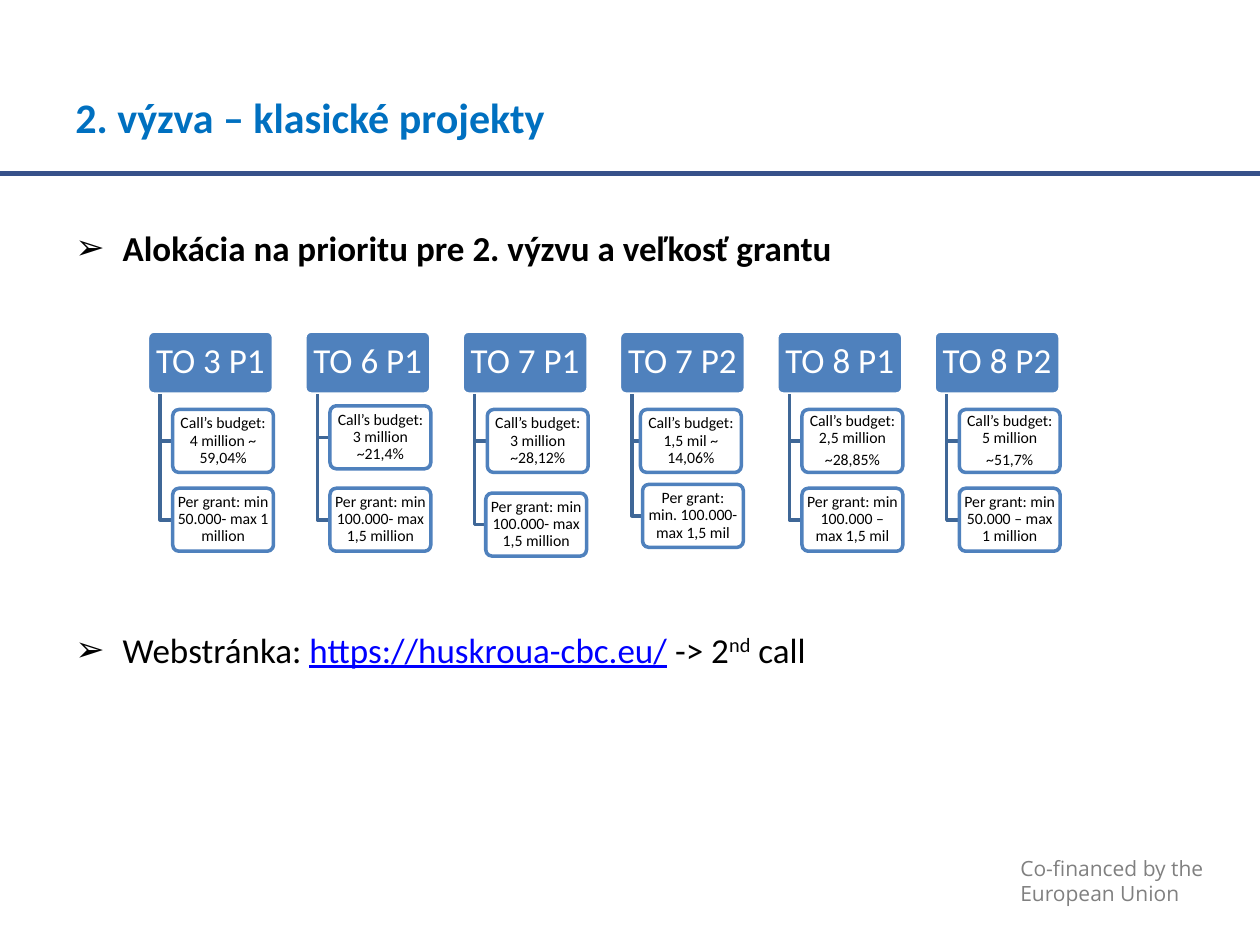
"""Build the slide on second-call allocations per priority and grant sizes."""
from dataclasses import dataclass
from typing import NamedTuple

from lxml.etree import SubElement
from pptx import Presentation
from pptx.dml.color import RGBColor
from pptx.enum.shapes import MSO_CONNECTOR, MSO_SHAPE
from pptx.enum.text import MSO_ANCHOR, PP_ALIGN
from pptx.oxml.ns import qn
from pptx.util import Pt


@dataclass(frozen=True)
class Theme:
    font: str = "Calibri"
    footer_font: str = "Open Sans"
    title: str = "0070C0"
    rule: str = "37518A"
    text: str = "000000"
    link: str = "0000FF"
    footer: str = "808080"
    white: str = "FFFFFF"
    accent: str = "4F81BD"
    branch: str = "3F6797"
    title_size: float = 24
    body_size: float = 20
    footer_size: float = 12
    detail_size: float = 9


class Box(NamedTuple):
    left: float
    top: float
    width: float
    height: float


class Detail(NamedTuple):
    lines: tuple[str, ...]
    dx: float = 0
    dy: float = 0


class Priority(NamedTuple):
    name: str
    budget: Detail
    grant: Detail


class Run(NamedTuple):
    text: str
    link: bool = False
    raised: bool = False


THEME = Theme()
FIRST_LEFT, COLUMN_PITCH = 84.3, 89.9
HEAD_TOP, HEAD_WIDTH, BOX_HEIGHT = 189.2, 72, 36
DETAIL_INDENT, DETAIL_WIDTH = 14.4, 57.6
BUDGET_TOP, GRANT_TOP = 234, 279
BRANCH_INDENT = 7.2

PRIORITIES = (
    Priority("TO 3 P1", Detail(("Call’s budget: 4 million ~ 59,04%",)),
             Detail(("Per grant: min 50.000- max 1 million",))),
    Priority("TO 6 P1", Detail(("Call’s budget: 3 million ~21,4%",), dy=-2.1),
             Detail(("Per grant: min 100.000- max 1,5 million",))),
    Priority("TO 7 P1", Detail(("Call’s budget: 3 million ~28,12%",)),
             Detail(("Per grant: min 100.000- max 1,5 million",), dx=-0.9, dy=2.8)),
    Priority("TO 7 P2", Detail(("Call’s budget: 1,5 mil ~ 14,06%",), dx=-2.4),
             Detail(("Per grant: min. 100.000-max 1,5 mil",), dx=-1.2, dy=-2.2)),
    Priority("TO 8 P1", Detail(("Call’s budget: 2,5 million", "~28,85%")),
             Detail(("Per grant: min 100.000 – max 1,5 mil",))),
    Priority("TO 8 P2", Detail(("Call’s budget: 5 million", "~51,7%")),
             Detail(("Per grant: min 50.000 – max 1 million",))),
)


def rgb(value: str) -> RGBColor:
    return RGBColor.from_string(value)


def style(font, name: str, size: float, color: str, bold: bool = False) -> None:
    font.name, font.size, font.bold = name, Pt(size), bold
    font.color.rgb = rgb(color)


def add_text(slide, box: Box, lines: tuple[str, ...], font: str, size: float,
             color: str, bold: bool = False, anchor=MSO_ANCHOR.TOP) -> None:
    frame = slide.shapes.add_textbox(*map(Pt, box)).text_frame
    frame.word_wrap, frame.vertical_anchor = True, anchor
    frame.text = "\n".join(lines)
    for paragraph in frame.paragraphs:
        style(paragraph.font, font, size, color, bold)


def add_bullet(slide, box: Box, runs: tuple[Run, ...], bold: bool = False) -> None:
    frame = slide.shapes.add_textbox(*map(Pt, box)).text_frame
    frame.word_wrap = True
    paragraph = frame.paragraphs[0]
    properties = paragraph._p.get_or_add_pPr()
    properties.set("marL", str(Pt(27)))
    properties.set("indent", str(Pt(-27)))
    SubElement(properties, qn("a:buFont")).set("typeface", THEME.font)
    SubElement(properties, qn("a:buChar")).set("char", "➢")
    style(paragraph.font, THEME.font, THEME.body_size, THEME.text, bold)
    for part in runs:
        run = paragraph.add_run()
        run.text = part.text
        if part.link:
            run.font.underline = True
            run.font.color.rgb = rgb(THEME.link)
        if part.raised:
            run._r.get_or_add_rPr().set("baseline", "30000")


def add_card(slide, box: Box, lines: tuple[str, ...], size: float, fill: str,
             outline: str, color: str, inset: float, opacity: int = 100) -> None:
    card = slide.shapes.add_shape(MSO_SHAPE.ROUNDED_RECTANGLE, *map(Pt, box))
    card.adjustments[0] = 0.1
    card.shadow.inherit = False
    card.fill.solid()
    card.fill.fore_color.rgb = rgb(fill)
    if opacity < 100:
        solid = card._element.spPr.find(qn("a:solidFill"))
        SubElement(solid[0], qn("a:alpha")).set("val", str(opacity * 1000))
    card.line.color.rgb = rgb(outline)
    card.line.width = Pt(2)
    frame = card.text_frame
    frame.word_wrap, frame.vertical_anchor = True, MSO_ANCHOR.MIDDLE
    frame.margin_left = frame.margin_right = Pt(inset)
    frame.margin_top = frame.margin_bottom = Pt(1)
    frame.text = "\n".join(lines)
    for paragraph in frame.paragraphs:
        paragraph.alignment, paragraph.line_spacing = PP_ALIGN.CENTER, 0.9
        paragraph.space_after = Pt(round(size * 0.35, 2))
        style(paragraph.font, THEME.font, size, color)


def add_branch(slide, spine: float, end: float, middle: float) -> None:
    builder = slide.shapes.build_freeform(Pt(spine), Pt(HEAD_TOP + BOX_HEIGHT))
    builder.add_line_segments(
        [(Pt(spine), Pt(middle)), (Pt(end), Pt(middle))], close=False)
    branch = builder.convert_to_shape()
    branch.shadow.inherit = False
    branch.fill.background()
    branch.line.color.rgb = rgb(THEME.branch)
    branch.line.width = Pt(2)


def add_priority(slide, left: float, priority: Priority) -> None:
    add_card(slide, Box(left, HEAD_TOP, HEAD_WIDTH, BOX_HEIGHT), (priority.name,),
             THEME.body_size, THEME.accent, THEME.white, THEME.white, 2.8)
    for detail, row_top in ((priority.budget, BUDGET_TOP), (priority.grant, GRANT_TOP)):
        box = Box(left + DETAIL_INDENT + detail.dx, row_top + detail.dy,
                  DETAIL_WIDTH, BOX_HEIGHT)
        add_branch(slide, left + BRANCH_INDENT, box.left, box.top + BOX_HEIGHT / 2)
        add_card(slide, box, detail.lines, THEME.detail_size, THEME.white,
                 THEME.accent, THEME.text, 1.4, opacity=90)


def add_rule(slide) -> None:
    rule = slide.shapes.add_connector(
        MSO_CONNECTOR.STRAIGHT, Pt(0), Pt(99.2), Pt(720), Pt(99.2))
    rule.line.color.rgb = rgb(THEME.rule)
    rule.line.width = Pt(3)
    SubElement(rule._element.spPr, qn("a:effectLst"))


def main() -> None:
    deck = Presentation()
    deck.slide_width, deck.slide_height = Pt(720), Pt(540)
    slide = deck.slides.add_slide(deck.slide_layouts[6])
    add_rule(slide)
    add_text(slide, Box(576, 485.3, 124, 36), ("Co-financed by the", "European Union"),
             THEME.footer_font, THEME.footer_size, THEME.footer)
    add_text(slide, Box(36, 21.6, 511.2, 90), ("2. výzva – klasické projekty",),
             THEME.font, THEME.title_size, THEME.title, True, MSO_ANCHOR.MIDDLE)
    add_bullet(slide, Box(36, 126, 648, 32),
               (Run("Alokácia na prioritu pre 2. výzvu a veľkosť grantu"),), bold=True)
    for column, priority in enumerate(PRIORITIES):
        add_priority(slide, FIRST_LEFT + column * COLUMN_PITCH, priority)
    add_bullet(slide, Box(36, 355.4, 648, 32), (
        Run("Webstránka: "), Run("https://huskroua-cbc.eu/", link=True),
        Run(" -> 2"), Run("nd", raised=True), Run(" call")))
    deck.save("out.pptx")


if __name__ == "__main__":
    main()
